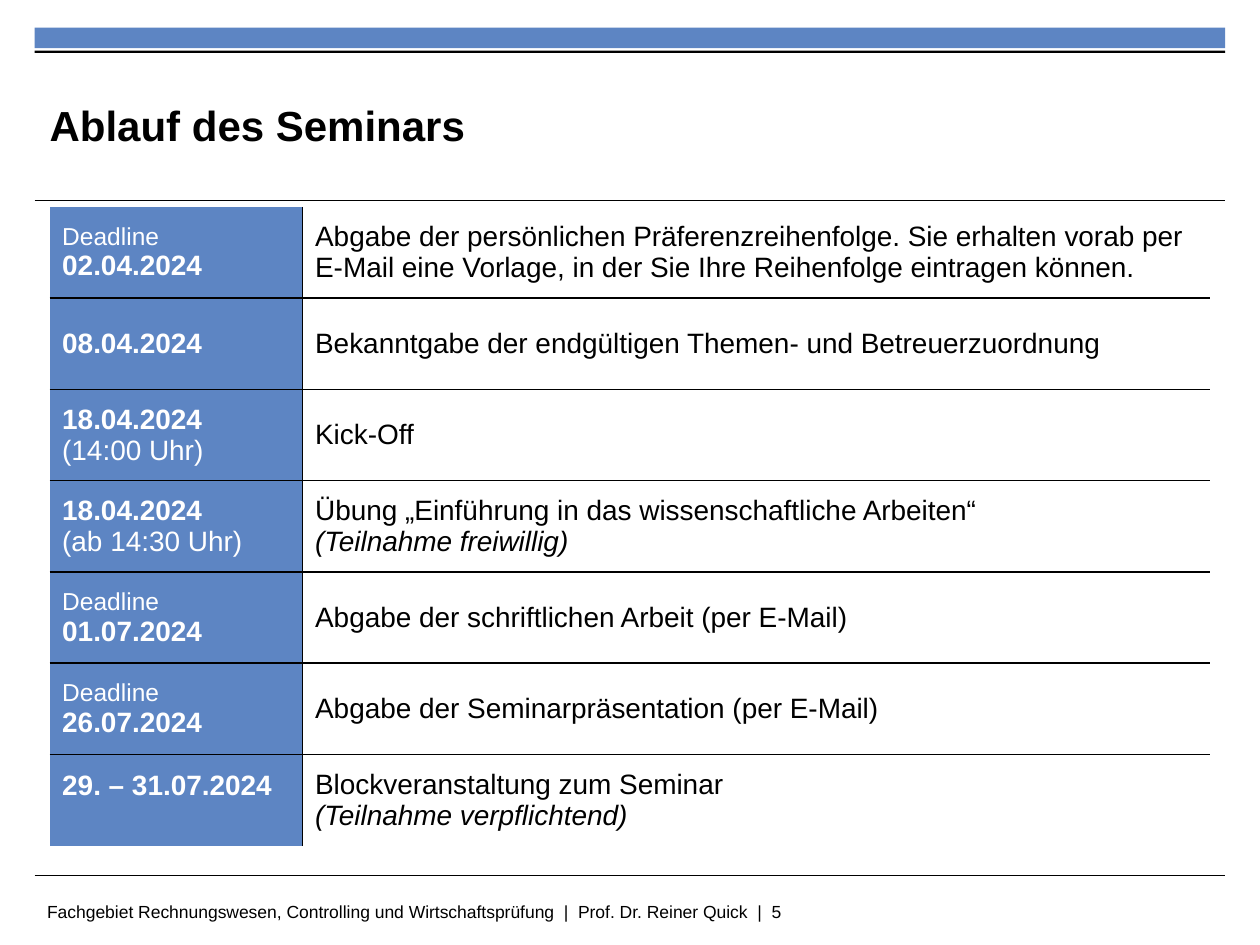
from pptx import Presentation
from pptx.dml.color import RGBColor
from pptx.enum.shapes import MSO_CONNECTOR, MSO_SHAPE
from pptx.enum.text import MSO_ANCHOR as Anchor, PP_ALIGN as Align
from pptx.oxml.ns import qn
from pptx.util import Cm, Pt
from lxml.etree import SubElement

COLORS = {"blue": "5D85C3", "black": "000000", "white": "FFFFFF"}
FONT = "Arial"

# Each cell is a list of (text, style) lines
SCHEDULE = [
    ([("Deadline", "label"), ("02.04.2024", "date")],
     [("Abgabe der persönlichen Präferenzreihenfolge. Sie erhalten vorab per "
       "E-Mail eine Vorlage, in der Sie Ihre Reihenfolge eintragen können.", "body")]),
    ([("08.04.2024", "date")],
     [("Bekanntgabe der endgültigen Themen- und Betreuerzuordnung", "body")]),
    ([("18.04.2024", "date"), ("(14:00 Uhr)", "time")],
     [("Kick-Off", "body")]),
    ([("18.04.2024", "date"), ("(ab 14:30 Uhr)", "time")],
     [("Übung „Einführung in das wissenschaftliche Arbeiten“", "body"),
      ("(Teilnahme freiwillig)", "remark")]),
    ([("Deadline", "label"), ("01.07.2024", "date")],
     [("Abgabe der schriftlichen Arbeit (per E-Mail)", "body")]),
    ([("Deadline", "label"), ("26.07.2024", "date")],
     [("Abgabe der Seminarpräsentation (per E-Mail)", "body")]),
    ([("29. – 31.07.2024", "date")],
     [("Blockveranstaltung zum Seminar", "body"),
      ("(Teilnahme verpflichtend)", "remark")]),
]

# Style: size, colour, bold, italic
STYLES = {
    "title": (24, "black", True, False),
    "footer": (10, "black", False, False),
    "label": (14, "white", False, False),
    "date": (16, "white", True, False),
    "time": (16, "white", False, False),
    "body": (16, "black", False, False),
    "remark": (16, "black", False, True),
}


def rgb(name):
    return RGBColor.from_string(COLORS[name])


def write_lines(frame, lines):
    for index, (text, style) in enumerate(lines):
        para = frame.paragraphs[0] if index == 0 else frame.add_paragraph()
        para.text = text
        para.alignment = Align.LEFT
        size, color, bold, italic = STYLES[style]
        font = para.font
        font.name, font.size, font.bold, font.italic = FONT, Pt(size), bold, italic
        font.color.rgb = rgb(color)


def add_bar(page, left, top, width, height, color):
    bar = page.shapes.add_shape(MSO_SHAPE.RECTANGLE, Cm(left), Cm(top), Cm(width), Cm(height))
    bar.shadow.inherit = False
    bar.fill.solid()
    bar.fill.fore_color.rgb = rgb(color)
    bar.line.fill.background()


def add_rule(page, left, top, width):
    rule = page.shapes.add_connector(
        MSO_CONNECTOR.STRAIGHT, Cm(left), Cm(top), Cm(left + width), Cm(top))
    rule.line.color.rgb = rgb("black")
    rule.line.width = Pt(0.6)
    SubElement(rule.element.spPr, qn("a:effectLst"))


def set_border(cell, side, visible):
    props = cell._tc.get_or_add_tcPr()
    line = SubElement(props, qn(f"a:ln{side}"), w=str(Pt(1)))
    if visible:
        fill = SubElement(line, qn("a:solidFill"))
        SubElement(fill, qn("a:srgbClr"), val=COLORS["black"])
    else:
        SubElement(line, qn("a:noFill"))


def add_header(page, left, top, width, height):
    add_bar(page, left, top, width, 0.41, "blue")
    add_bar(page, left, top + 0.46, width, 0.05, "black")
    add_rule(page, left, top + height, width)

    title = page.shapes.title
    title.left, title.top = Cm(left + 0.3), Cm(top + 0.79)
    title.width, title.height = Cm(18.44), Cm(2.34)
    frame = title.text_frame
    frame.margin_left = frame.margin_right = frame.margin_top = frame.margin_bottom = 0
    frame.vertical_anchor = Anchor.MIDDLE
    write_lines(frame, [("Ablauf des Seminars", "title")])


def add_schedule(page, left, top, widths, row_height):
    last = len(SCHEDULE) - 1
    table = page.shapes.add_table(
        len(SCHEDULE), 2, Cm(left), Cm(top),
        Cm(sum(widths)), Cm(row_height * len(SCHEDULE))).table
    table.first_row = table.horz_banding = False
    for column, width in zip(table.columns, widths):
        column.width = Cm(width)
    for row, entry in enumerate(SCHEDULE):
        table.rows[row].height = Cm(row_height)
        for col, lines in enumerate(entry):
            cell = table.cell(row, col)
            cell.vertical_anchor = Anchor.MIDDLE
            write_lines(cell.text_frame, lines)
            # Only the inner grid lines are drawn
            inner = {"L": col == 1, "R": col == 0, "T": row > 0, "B": row < last}
            for side, visible in inner.items():
                set_border(cell, side, visible)
            if col == 0:
                cell.fill.solid()
                cell.fill.fore_color.rgb = rgb("blue")
            else:
                cell.fill.background()
    # The last date sits slightly above the middle
    table.cell(last, 0).margin_bottom = Cm(0.69)


def add_footer(page, left, top, width):
    add_rule(page, left, top, width)
    box = page.shapes.add_textbox(Cm(left), Cm(top + 0.38), Cm(20.02), Cm(0.64))
    box.text_frame.word_wrap = True
    write_lines(box.text_frame, [(
        "Fachgebiet Rechnungswesen, Controlling und Wirtschaftsprüfung  |  "
        "Prof. Dr. Reiner Quick  |  5", "footer")])


def main():
    deck = Presentation()
    deck.slide_width, deck.slide_height = Cm(25.4), Cm(19.05)
    page = deck.slides.add_slide(deck.slide_layouts[5])
    add_header(page, 0.7, 0.56, 24, 3.48)
    add_schedule(page, 1, 4.17, (5.1, 18.3), 1.84)
    add_footer(page, 0.7, 17.65, 24)
    deck.save("out.pptx")


if __name__ == "__main__":
    main()
